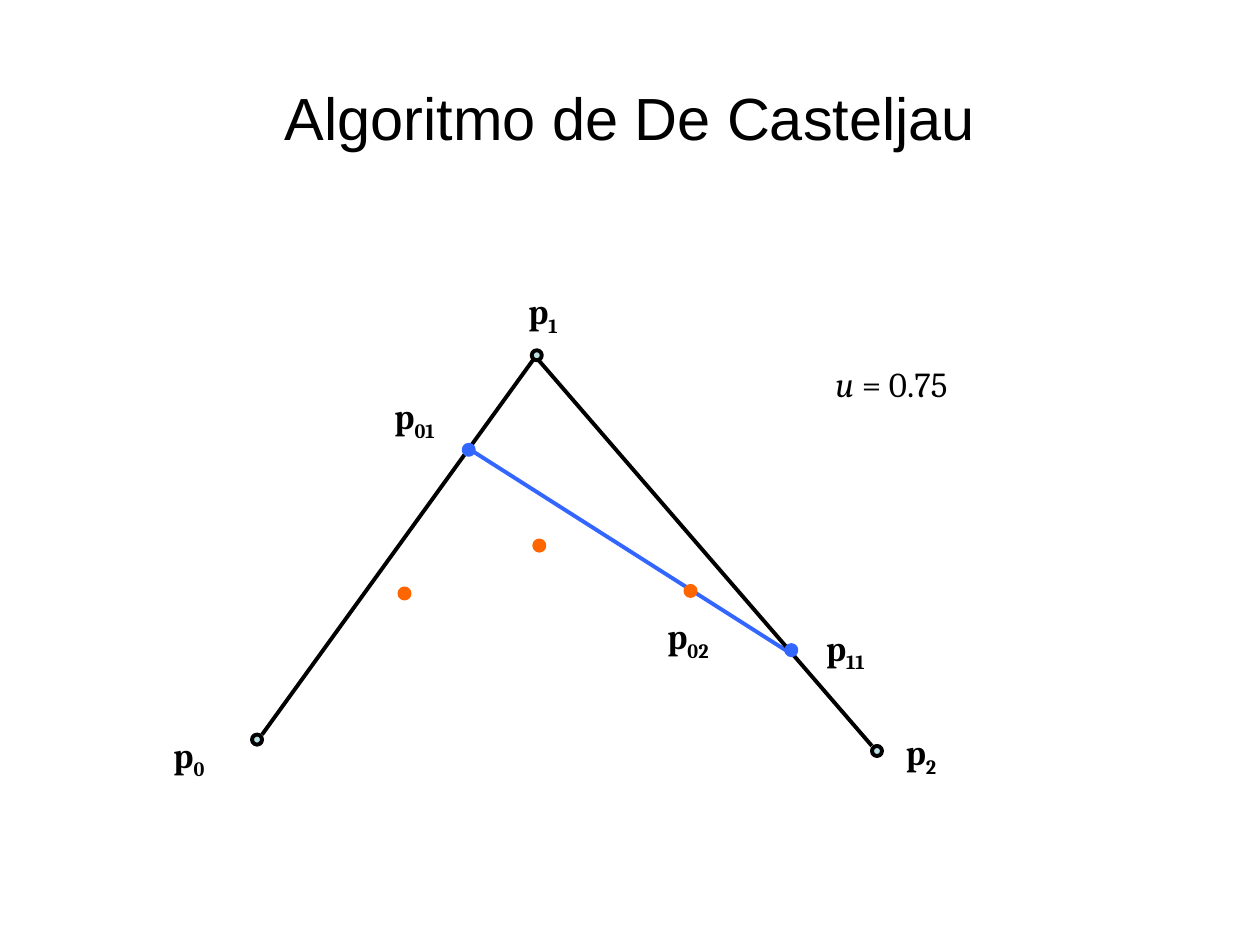
from typing import NamedTuple

from lxml.etree import SubElement
from pptx import Presentation
from pptx.dml.color import RGBColor
from pptx.enum.shapes import MSO_CONNECTOR, MSO_SHAPE
from pptx.enum.text import MSO_ANCHOR, MSO_AUTO_SIZE, PP_ALIGN
from pptx.oxml.ns import qn
from pptx.util import Inches, Pt

COLORS = {"black": "000000", "pale": "BBE0E3", "blue": "3366FF", "orange": "FF6600"}
DOT = 0.08
LINE_WIDTH = Pt(2.25)
LABEL_HEIGHT = 0.43
TITLE_FONT = {"name": "Arial", "size": Pt(34), "bold": False}
LABEL_FONT = {"name": "Cambria", "size": Pt(20)}


class Segment(NamedTuple):
    x1: float
    y1: float
    x2: float
    y2: float
    color: str


class Dot(NamedTuple):
    x: float
    y: float
    fill: str
    line: str


class Label(NamedTuple):
    x: float
    y: float
    width: float
    sub: str
    wrap: bool = True


SEGMENTS = [
    Segment(3.75, 3.58, 6.25, 5.17, "blue"),
    Segment(2.08, 5.83, 4.25, 2.83, "black"),
    Segment(4.25, 2.83, 6.92, 5.92, "black"),
]
DOTS = [
    Dot(2, 5.83, "pale", "black"),
    Dot(4.22, 2.78, "pale", "black"),
    Dot(3.68, 3.53, "blue", "blue"),
    Dot(6.24, 5.12, "blue", "blue"),
    Dot(6.92, 5.92, "pale", "black"),
    Dot(3.17, 4.67, "orange", "orange"),
    Dot(4.24, 4.29, "orange", "orange"),
    Dot(5.44, 4.65, "orange", "orange"),
]
LABELS = [
    Label(1.27, 5.77, 0.46, "0", wrap=False),
    Label(4.08, 2.25, 0.46, "1"),
    Label(7.08, 5.75, 0.46, "2"),
    Label(6.42, 4.92, 0.58, "11"),
    Label(3, 3.08, 0.58, "01"),
    Label(5.17, 4.83, 0.58, "02"),
]


def rgb(name: str) -> RGBColor:
    return RGBColor.from_string(COLORS[name])


def add_run(p, text: str, fmt: dict):
    r = p.add_run()
    r.text = text
    for key, value in fmt.items():
        setattr(r.font, key, value)
    r.font.color.rgb = rgb("black")
    return r


def add_title(s, text: str) -> None:
    sp = s.shapes.title
    box = {"left": 0.5, "top": 0.3, "width": 9, "height": 1.25}
    for key, value in box.items():
        setattr(sp, key, Inches(value))
    tf = sp.text_frame
    tf.vertical_anchor = MSO_ANCHOR.MIDDLE
    p = tf.paragraphs[0]
    p.alignment = PP_ALIGN.CENTER
    add_run(p, text, TITLE_FONT)


def add_segment(s, seg: Segment) -> None:
    ends = [Inches(v) for v in seg[:4]]
    cxn = s.shapes.add_connector(MSO_CONNECTOR.STRAIGHT, *ends)
    cxn.line.color.rgb = rgb(seg.color)
    cxn.line.width = LINE_WIDTH
    SubElement(cxn._element.spPr, qn("a:effectLst"))


def add_dot(s, dot: Dot) -> None:
    box = [Inches(v) for v in (dot.x, dot.y, DOT, DOT)]
    sp = s.shapes.add_shape(MSO_SHAPE.OVAL, *box)
    sp.shadow.inherit = False
    sp.fill.solid()
    sp.fill.fore_color.rgb = rgb(dot.fill)
    sp.line.color.rgb = rgb(dot.line)
    sp.line.width = LINE_WIDTH


def add_text(s, x: float, y: float, width: float, wrap: bool):
    box = [Inches(v) for v in (x, y, width, LABEL_HEIGHT)]
    tf = s.shapes.add_textbox(*box).text_frame
    tf.word_wrap = wrap
    tf.auto_size = MSO_AUTO_SIZE.SHAPE_TO_FIT_TEXT
    p = tf.paragraphs[0]
    p.alignment = PP_ALIGN.CENTER
    return p


def add_label(s, label: Label) -> None:
    p = add_text(s, label.x, label.y, label.width, label.wrap)
    fmt = LABEL_FONT | {"bold": True}
    add_run(p, "p", fmt)
    r = add_run(p, label.sub, fmt)
    r._r.get_or_add_rPr().set("baseline", "-25000")


def main() -> None:
    prs = Presentation()
    prs.slide_width, prs.slide_height = Inches(10), Inches(7.5)
    s = prs.slides.add_slide(prs.slide_layouts[5])
    add_title(s, "Algoritmo de De Casteljau")
    for seg in SEGMENTS:
        add_segment(s, seg)
    for dot in DOTS:
        add_dot(s, dot)
    for label in LABELS:
        add_label(s, label)
    p = add_text(s, 6.5, 2.83, 1.15, wrap=False)
    add_run(p, "u", LABEL_FONT | {"italic": True})
    add_run(p, " = 0.75", LABEL_FONT)
    prs.save("out.pptx")


if __name__ == "__main__":
    main()
